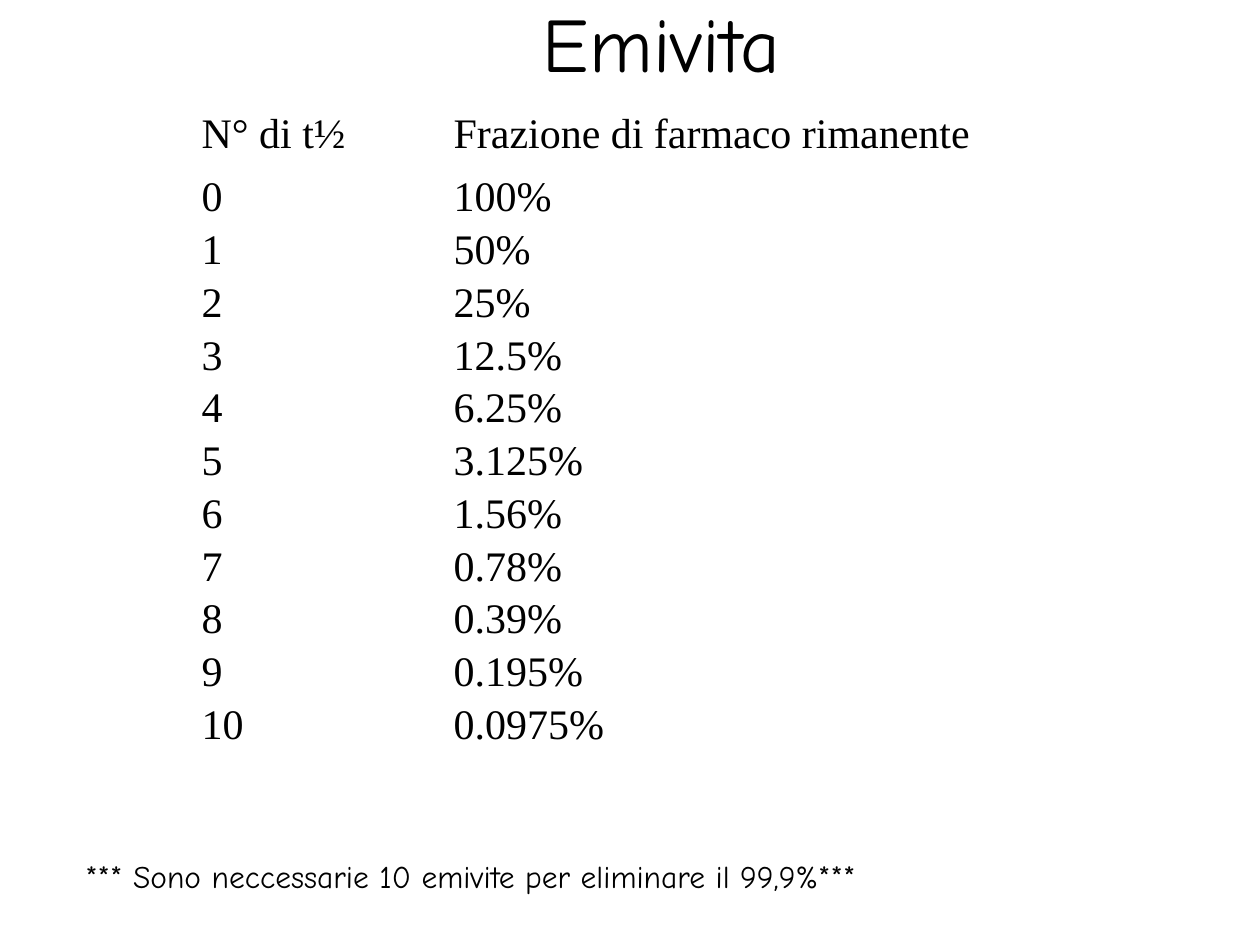
from dataclasses import dataclass

from lxml import etree
from pptx import Presentation
from pptx.dml.color import RGBColor
from pptx.enum.text import MSO_ANCHOR, PP_ALIGN
from pptx.oxml.ns import qn
from pptx.util import Cm, Pt

MIDDLE = MSO_ANCHOR.MIDDLE
CENTER = PP_ALIGN.CENTER
LEFT = PP_ALIGN.LEFT


@dataclass(frozen=True)
class Theme:
    ink: RGBColor = RGBColor(0, 0, 0)
    border: str = "FFFFFF"
    display_font: str = "Comic Neue"
    table_font: str = "Times New Roman"
    title_size: Pt = Pt(44)
    table_size: Pt = Pt(24)
    note_size: Pt = Pt(18)
    line_gap: Pt = Pt(3.6)


THEME = Theme()


def style(paragraph, font_name, size, alignment=LEFT):
    paragraph.alignment = alignment
    paragraph.font.name = font_name
    paragraph.font.size = size
    paragraph.font.color.rgb = THEME.ink


def add_borders(cell):
    properties = cell._tc.get_or_add_tcPr()
    for position, side in enumerate(("lnL", "lnR", "lnT", "lnB")):
        line = etree.Element(qn(f"a:{side}"), w=str(Pt(1)))
        fill = etree.SubElement(line, qn("a:solidFill"))
        etree.SubElement(fill, qn("a:srgbClr"), val=THEME.border)
        properties.insert(position, line)


prs = Presentation()
prs.slide_width = Cm(25.4)
prs.slide_height = Cm(19.05)
slide = prs.slides.add_slide(prs.slide_layouts[6])

title = slide.shapes.add_textbox(Cm(2.54), Cm(0), Cm(21.59), Cm(1.7)).text_frame
title.word_wrap = True
title.vertical_anchor = MIDDLE
title.text = "Emivita"
style(title.paragraphs[0], THEME.display_font, THEME.title_size, CENTER)

note = slide.shapes.add_textbox(Cm(1.47), Cm(17.15), Cm(23.37), Cm(1.27)).text_frame
note.word_wrap = True
note.text = "*** Sono neccessarie 10 emivite per eliminare il 99,9%***"
style(note.paragraphs[0], THEME.display_font, THEME.note_size)

remaining = ["100%", "50%", "25%", "12.5%", "6.25%", "3.125%",
             "1.56%", "0.78%", "0.39%", "0.195%", "0.0975%"]
half_lives = [str(count) for count in range(len(remaining))]
contents = [
    [["N° di t½"], ["Frazione di farmaco rimanente"]],
    [half_lives, remaining],
]

decay = slide.shapes.add_table(2, 2, Cm(3.81), Cm(2.12), Cm(18.85), Cm(14.73)).table
decay.first_row = False
decay.horz_banding = False
for column, width in zip(decay.columns, (5.08, 13.77)):
    column.width = Cm(width)
for row, height in zip(decay.rows, (1.27, 13.46)):
    row.height = Cm(height)

for row, row_contents in zip(decay.rows, contents):
    for cell, lines in zip(row.cells, row_contents):
        cell.fill.background()
        add_borders(cell)
        cell.text = "\n".join(lines)
        for index, paragraph in enumerate(cell.text_frame.paragraphs):
            style(paragraph, THEME.table_font, THEME.table_size)
            paragraph.space_before = THEME.line_gap if index else Pt(0)

prs.save("out.pptx")
